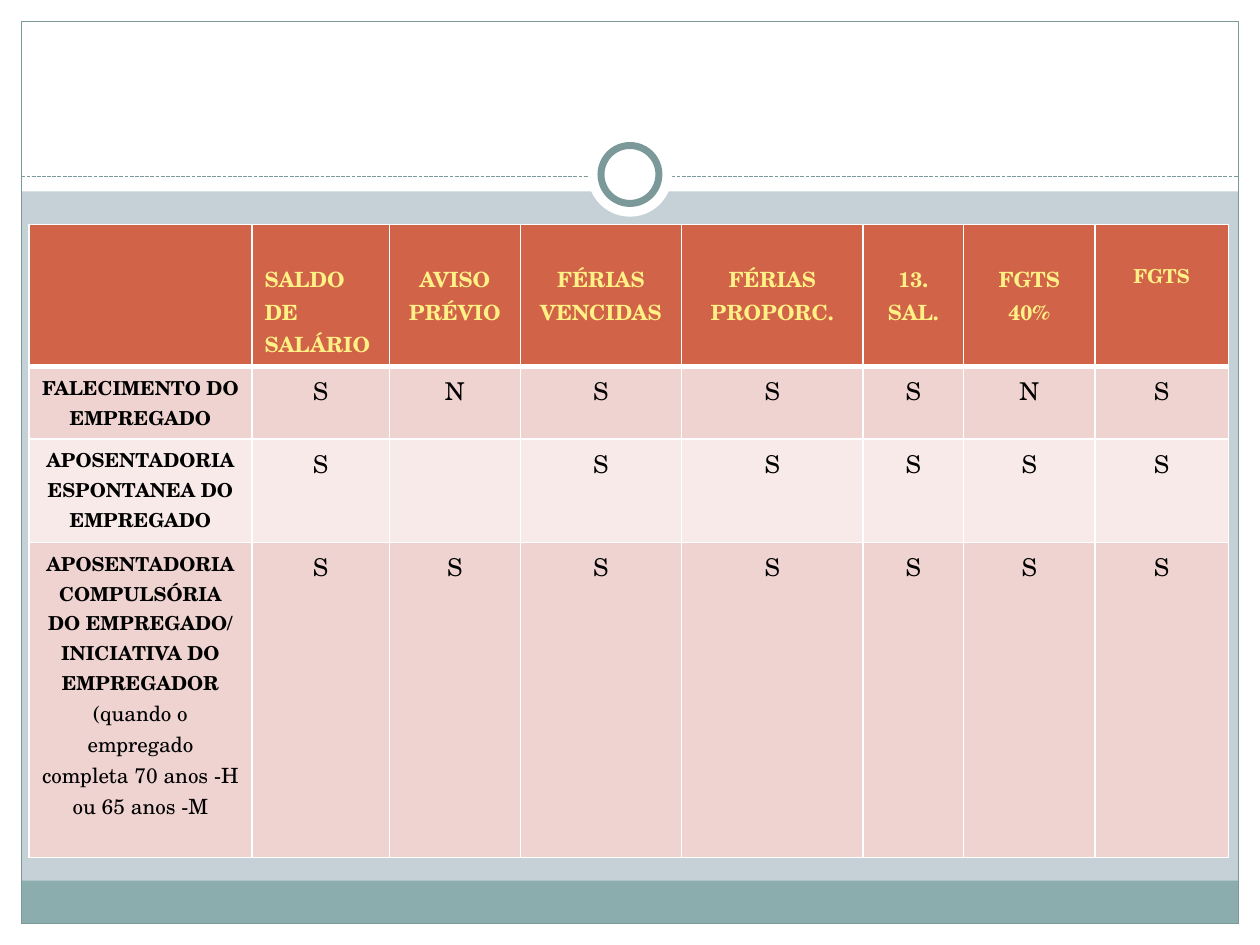
from lxml.etree import SubElement
from pptx import Presentation
from pptx.dml.color import RGBColor
from pptx.enum.dml import MSO_LINE
from pptx.enum.shapes import MSO_CONNECTOR, MSO_SHAPE
from pptx.enum.text import PP_ALIGN
from pptx.oxml.ns import qn
from pptx.util import Inches, Pt

FONT = "TeX Gyre Schola"
WHITE, TEAL, RUST, YELLOW, BLACK = "FFFFFF", "7C999A", "D16349", "FFF185", "000000"
BANDS = ["EED3D0", "F7EAE9"]

COLUMN_WIDTHS = [1.77, 1.09, 1.04, 1.28, 1.44, 0.8, 1.04, 1.06]
ROW_HEIGHTS = [1.13, 0.57, 0.82, 2.5]
HEADERS = ["", "SALDO DE SALÁRIO", "AVISO PRÉVIO", "FÉRIAS VENCIDAS",
           "FÉRIAS PROPORC.", "13. SAL.", "FGTS 40%", "FGTS"]
CASES = [
    ("FALECIMENTO DO EMPREGADO", "", ["S", "N", "S", "S", "S", "N", "S"]),
    ("APOSENTADORIA ESPONTANEA DO EMPREGADO", "", ["S", "", "S", "S", "S", "S", "S"]),
    ("APOSENTADORIA COMPULSÓRIA DO EMPREGADO/ INICIATIVA DO EMPREGADOR",
     "(quando o empregado completa 70 anos -H ou 65 anos -M", ["S"] * 7),
]


def color(value):
    return RGBColor.from_string(value)


def add_plain_shape(page, kind, box, fill=None, line=None, line_width=0.75):
    shape = page.shapes.add_shape(kind, *[Inches(length) for length in box])
    shape.shadow.inherit = False
    if fill:
        shape.fill.solid()
        shape.fill.fore_color.rgb = color(fill)
    else:
        shape.fill.background()
    if line:
        shape.line.color.rgb = color(line)
        shape.line.width = Pt(line_width)
    else:
        shape.line.fill.background()


def add_ring(page, center_x, center_y):
    for size, line in [(0.67, None), (0.46, TEAL)]:
        box = (center_x - size / 2, center_y - size / 2, size, size)
        add_plain_shape(page, MSO_SHAPE.OVAL, box, WHITE, line, 4)


def add_backdrop(page, width, height):
    page.background.fill.solid()
    page.background.fill.fore_color.rgb = color("C5D1D7")
    edge = 0.17
    inner_width = width - 2 * edge

    # White margins and title band
    for box in [(0, height - edge, width, edge), (0, 0, width, 1.52),
                (0, 0, edge, height), (width - edge, 0, edge, height)]:
        add_plain_shape(page, MSO_SHAPE.RECTANGLE, box, WHITE)

    # Footer band and frame
    add_plain_shape(page, MSO_SHAPE.RECTANGLE, (edge, 6.99, inner_width, 0.34), "8CADAE")
    add_plain_shape(page, MSO_SHAPE.RECTANGLE,
                    (edge, edge, inner_width, height - 2 * edge), line=TEAL)

    # Dashed divider with its ring
    divider = page.shapes.add_connector(MSO_CONNECTOR.STRAIGHT, Inches(edge), Inches(1.4),
                                        Inches(width - edge), Inches(1.4))
    divider.line.color.rgb = color(TEAL)
    divider.line.width = Pt(0.75)
    divider.line.dash_style = MSO_LINE.SQUARE_DOT
    SubElement(divider._element.spPr, qn("a:effectLst"))
    add_ring(page, width / 2, 1.385)


def style_cell(cell, fill, top=1, bottom=1):
    properties = cell._tc.get_or_add_tcPr()
    for side, width in [("L", 1), ("R", 1), ("T", top), ("B", bottom)]:
        border = SubElement(properties, qn(f"a:ln{side}"), w=str(Pt(width)))
        paint = SubElement(border, qn("a:solidFill"))
        SubElement(paint, qn("a:srgbClr"), val=WHITE)
    cell.fill.solid()
    cell.fill.fore_color.rgb = color(fill)


def write_para(para, text, size, bold, ink=BLACK, align=PP_ALIGN.CENTER):
    para.text = text
    para.alignment = align
    para.font.name = FONT
    para.font.size = Pt(size)
    para.font.bold = bold
    para.font.color.rgb = color(ink)


def add_rights_table(page, left, top):
    frame = page.shapes.add_table(len(ROW_HEIGHTS), len(COLUMN_WIDTHS), Inches(left),
                                  Inches(top), Inches(sum(COLUMN_WIDTHS)),
                                  Inches(sum(ROW_HEIGHTS)))
    table = frame.table
    for column, width in zip(table.columns, COLUMN_WIDTHS):
        column.width = Inches(width)
    for row, height in zip(table.rows, ROW_HEIGHTS):
        row.height = Inches(height)

    # Header row
    for index, title in enumerate(HEADERS):
        cell = table.cell(0, index)
        style_cell(cell, RUST, bottom=3)
        if title:
            cell.margin_top = Inches(0.29 if title == "FGTS" else 0.31)
            write_para(cell.text_frame.paragraphs[0], title, 11 if title == "FGTS" else 12,
                       True, YELLOW, PP_ALIGN.LEFT if index == 1 else PP_ALIGN.CENTER)

    # One row for each way the contract ends
    for row, (case, remark, answers) in enumerate(CASES, start=1):
        for index, text in enumerate([case] + answers):
            cell = table.cell(row, index)
            style_cell(cell, BANDS[(row - 1) % 2], top=3 if row == 1 else 1)
            if text:
                is_label = index == 0
                write_para(cell.text_frame.paragraphs[0], text, 11 if is_label else 14, is_label)
        if remark:
            write_para(table.cell(row, 0).text_frame.add_paragraph(), remark, 12, False)


def main():
    deck = Presentation()
    deck.slide_width, deck.slide_height = Inches(10), Inches(7.5)
    page = deck.slides.add_slide(deck.slide_layouts[6])
    add_backdrop(page, 10, 7.5)
    add_rights_table(page, 0.23, 1.78)
    deck.save("out.pptx")


if __name__ == "__main__":
    main()
